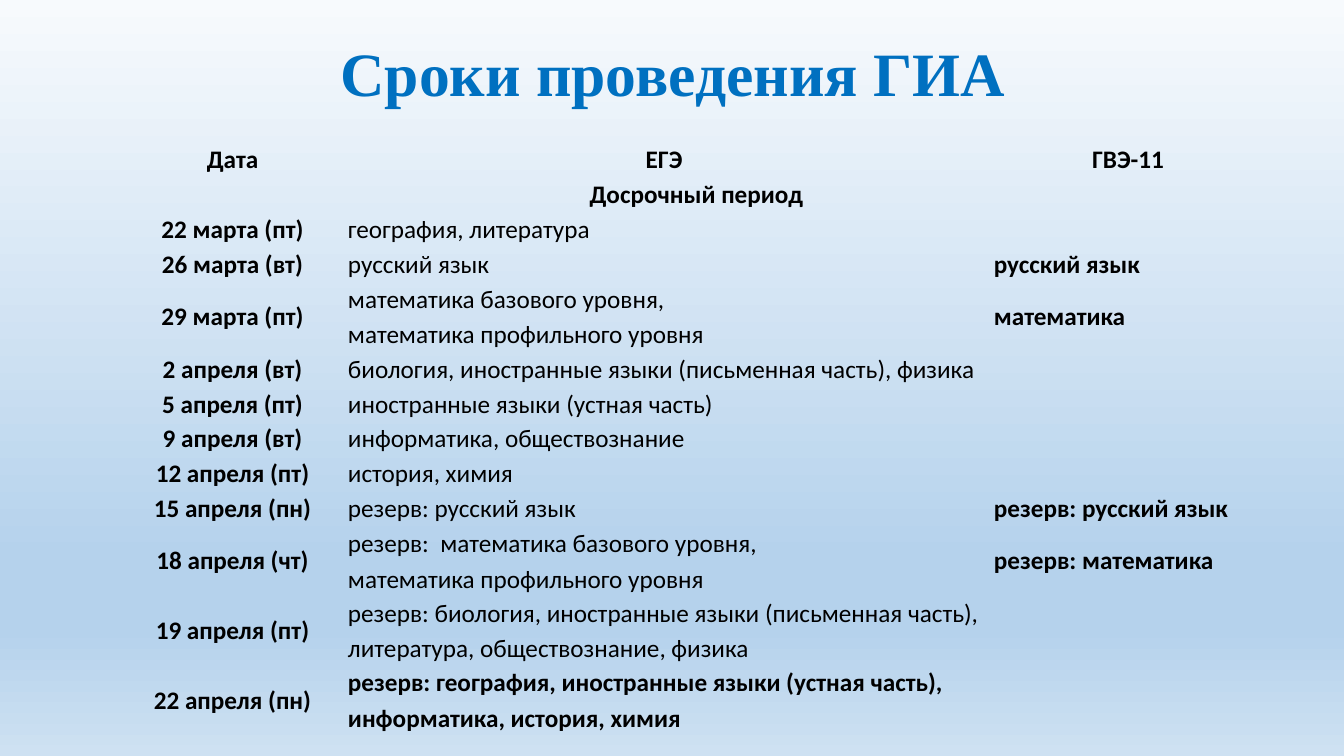
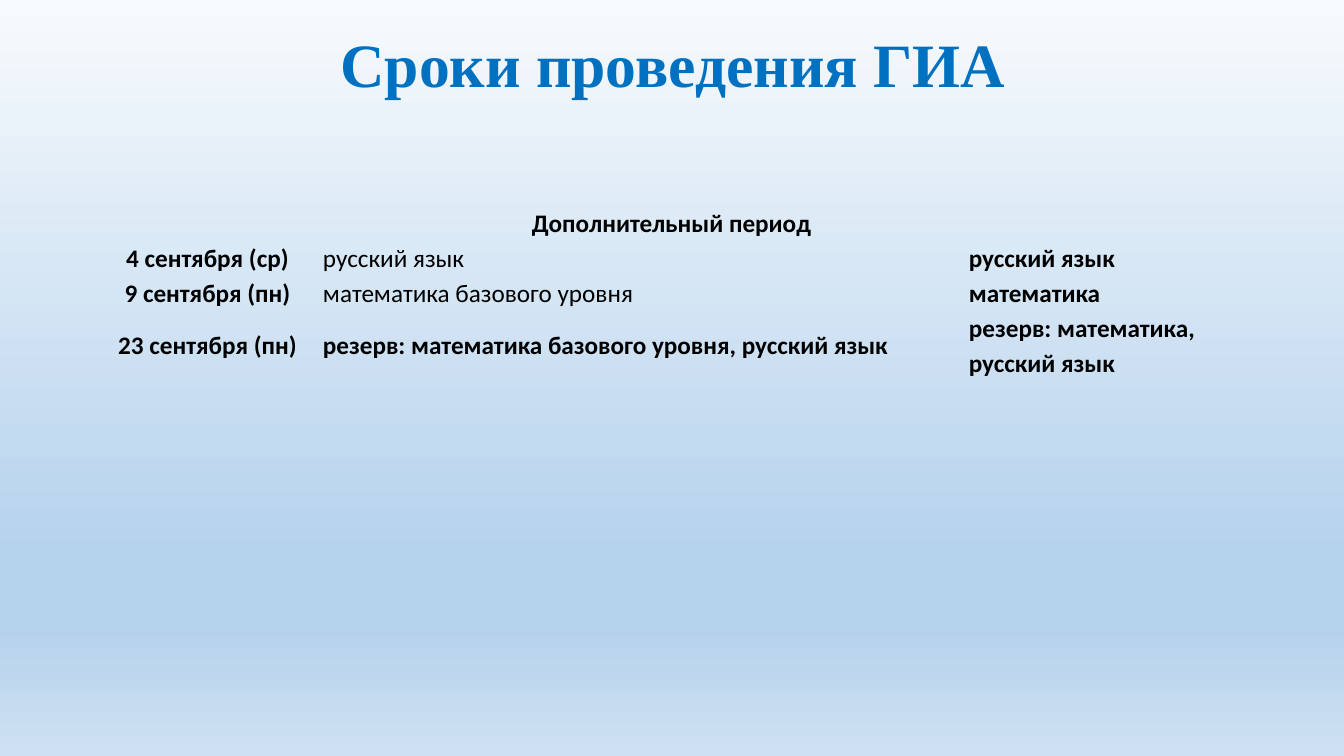
from copy import deepcopy

from pptx import Presentation
from pptx.dml.color import RGBColor
from pptx.enum.text import MSO_ANCHOR as Anchor, PP_ALIGN as Align
from pptx.oxml.ns import qn
from pptx.util import Pt

PX = 914400 / 100.8
THEME = {
    "sky": [(0, "F7FAFD"), (74, "B5D2EC"), (83, "B5D2EC"), (100, "CEE1F2")],
    "title": {"name": "Times New Roman", "size": Pt(44), "bold": True},
    "strong": {"name": "Calibri", "size": Pt(18), "bold": True},
    "plain": {"name": "Calibri", "size": Pt(18), "bold": False},
    "colors": {"title": "0070C0", "strong": "000000", "plain": "000000"},
}
NO_STYLE_NO_GRID = "{2D5ABB26-0587-4C30-8999-92F81FD0307C}"
TITLE = "Сроки проведения ГИА"
TITLE_HEIGHT = 126
COLUMNS = [217, 646, 282]
ROW_HEIGHT = 35
CELL_FORMAT = {
    "vertical_anchor": Anchor.MIDDLE,
    "margin_left": round(7 * PX),
    "margin_right": round(7 * PX),
    "margin_top": 0,
    "margin_bottom": 0,
}

# A row with a single entry is a period heading across all columns.
EARLY_PERIOD = [
    ("Дата", "ЕГЭ", "ГВЭ-11"),
    ("Досрочный период",),
    ("22 марта (пт)", "география, литература", ""),
    ("26 марта (вт)", "русский язык", "русский язык"),
    ("29 марта (пт)", "математика базового уровня,\nматематика профильного уровня", "математика"),
    ("2 апреля (вт)", "биология, иностранные языки (письменная часть), физика", ""),
    ("5 апреля (пт)", "иностранные языки (устная часть)", ""),
    ("9 апреля (вт)", "информатика, обществознание", ""),
    ("12 апреля (пт)", "история, химия", ""),
    ("15 апреля (пн)", "резерв: русский язык", "резерв: русский язык"),
    ("18 апреля (чт)", "резерв:  математика базового уровня,\nматематика профильного уровня",
     "резерв: математика"),
    ("19 апреля (пт)", "резерв: биология, иностранные языки (письменная часть), "
     "литература, обществознание, физика", ""),
    ("22 апреля (пн)", "резерв: география, иностранные языки (устная часть), "
     "информатика, история, химия", ""),
]
EXTRA_PERIOD = [
    ("Дополнительный период",),
    ("4 сентября (ср)", "русский язык", "русский язык"),
    ("9 сентября (пн)", "математика базового уровня", "математика"),
    ("23 сентября (пн)", "резерв: математика базового уровня, русский язык",
     "резерв: математика, русский язык"),
]
# title left, top, width; table left, top; timetable
SLIDES = [
    ((21, 14, 1304), (124, 140), EARLY_PERIOD),
    ((68, 5, 1210), (99, 204), EXTRA_PERIOD),
]


def px(*lengths):
    return [round(length * PX) for length in lengths]


def write(frame, text, style, align, spacing):
    """Fill the frame with one paragraph per line of text, all in one theme style."""
    frame.text = text
    for paragraph in frame.paragraphs:
        paragraph.alignment = align
        paragraph.line_spacing = spacing
        for run in paragraph.runs:
            for key, value in THEME[style].items():
                setattr(run.font, key, value)
            run.font.color.rgb = RGBColor.from_string(THEME["colors"][style])
        if not paragraph.runs:
            # The end mark sets the line height of an empty cell.
            end_mark = paragraph._p.get_or_add_endParaRPr()
            end_mark.set("sz", str(round(THEME[style]["size"].pt * 100)))


prs = Presentation()
prs.slide_width, prs.slide_height = px(1344, 756)

# Shared background on the master
master = prs.slide_master
sky = master.background.fill
sky.gradient()
sky.gradient_angle = 270
stops = master.element.find(".//" + qn("a:gsLst"))
while len(stops) < len(THEME["sky"]):
    stops.append(deepcopy(stops[0]))
for stop, (percent, color) in zip(sky.gradient_stops, THEME["sky"]):
    stop.position = percent / 100
    stop.color.rgb = RGBColor.from_string(color)

for (left, top, width), table_corner, timetable in SLIDES:
    slide = prs.slides.add_slide(prs.slide_layouts[6])

    heading = slide.shapes.add_textbox(*px(left, top, width, TITLE_HEIGHT)).text_frame
    heading.word_wrap = True
    heading.vertical_anchor = Anchor.MIDDLE
    write(heading, TITLE, "title", Align.CENTER, 0.9)

    size = sum(COLUMNS), ROW_HEIGHT * len(timetable)
    schedule = slide.shapes.add_table(
        len(timetable), len(COLUMNS), *px(*table_corner, *size)).table
    schedule._tbl.tblPr.find(qn("a:tableStyleId")).text = NO_STYLE_NO_GRID
    schedule.first_row = schedule.horz_banding = False
    for column, column_width in zip(schedule.columns, px(*COLUMNS)):
        column.width = column_width

    for r, entries in enumerate(timetable):
        if len(entries) == 1:
            schedule.cell(r, 0).merge(schedule.cell(r, len(COLUMNS) - 1))
        header = entries[0] == "Дата"
        last = r == len(timetable) - 1
        for c in range(len(COLUMNS)):
            cell = schedule.cell(r, c)
            cell.fill.background()
            for key, value in CELL_FORMAT.items():
                setattr(cell, key, value)
            write(cell.text_frame,
                  entries[c] if c < len(entries) else "",
                  "plain" if c == 1 and not header and not last else "strong",
                  Align.CENTER if c == 0 or header else Align.LEFT,
                  1.15)

prs.save("out.pptx")
